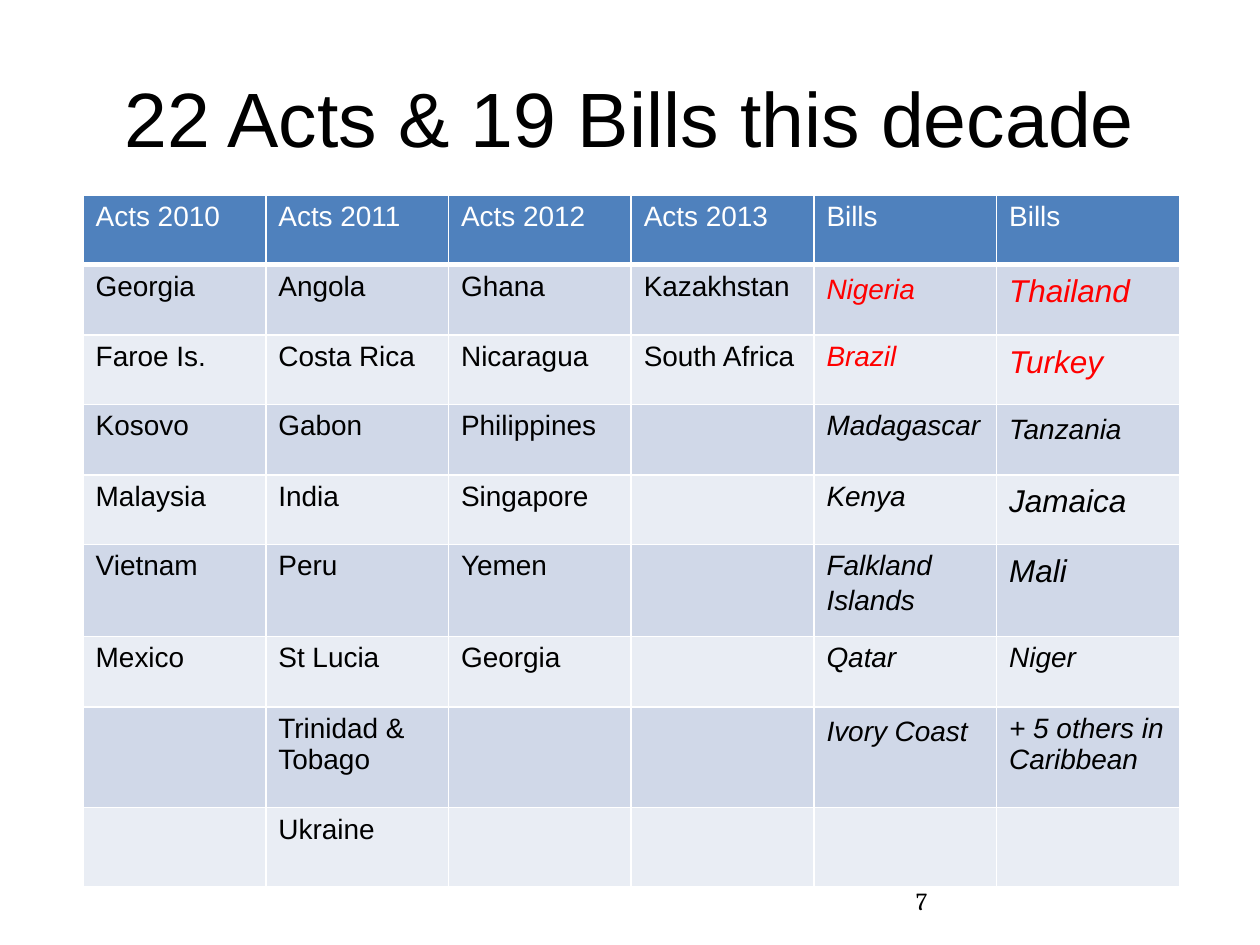
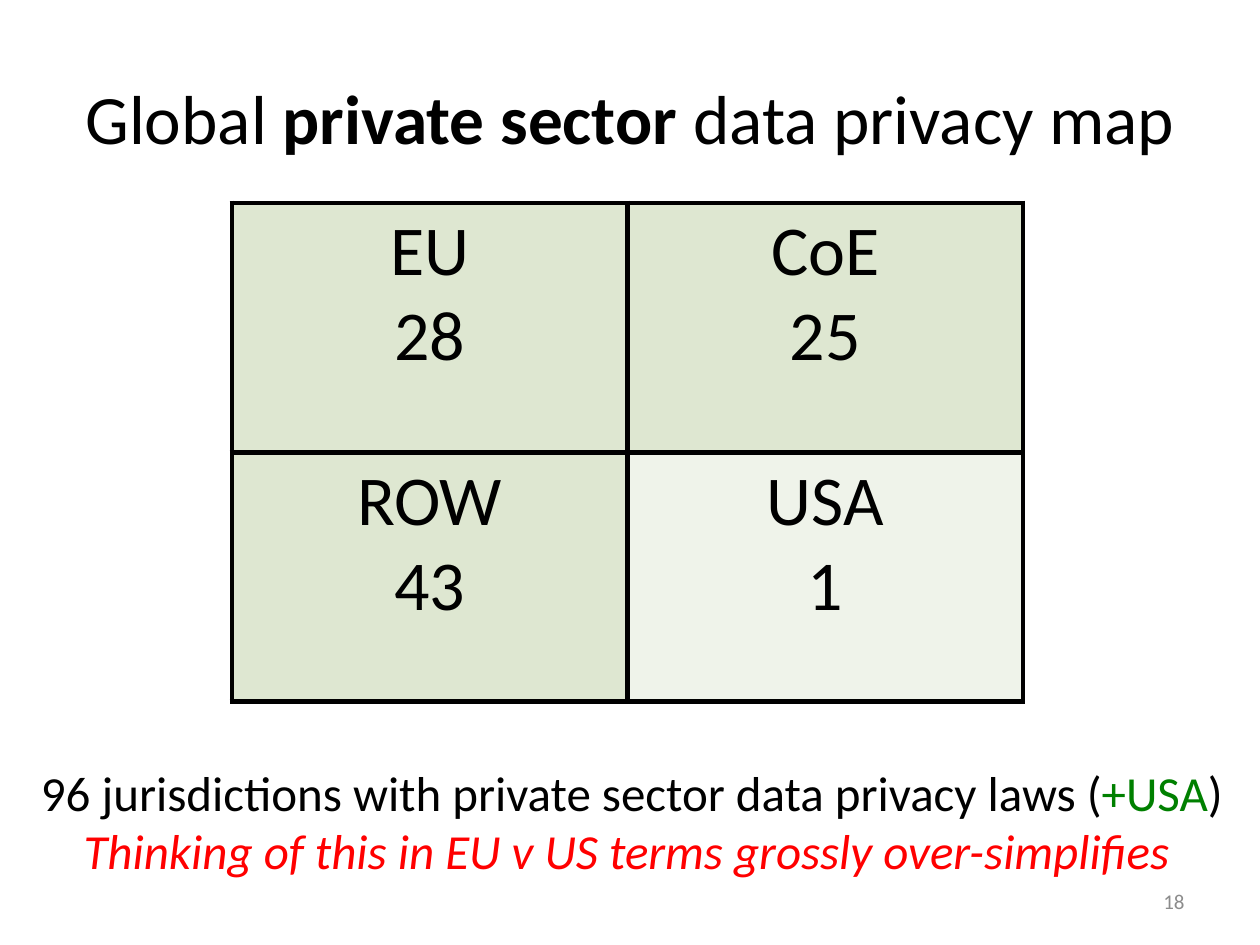
from dataclasses import dataclass
from itertools import zip_longest

from lxml import etree
from pptx import Presentation
from pptx.dml.color import RGBColor
from pptx.enum.text import MSO_ANCHOR, MSO_AUTO_SIZE, PP_ALIGN
from pptx.oxml.ns import qn
from pptx.util import Emu, Pt

LEFT, CENTER, RIGHT = PP_ALIGN.LEFT, PP_ALIGN.CENTER, PP_ALIGN.RIGHT
MIDDLE = MSO_ANCHOR.MIDDLE
NO_FIT, GROW = MSO_AUTO_SIZE.NONE, MSO_AUTO_SIZE.SHAPE_TO_FIT_TEXT
EMU_PER_PX = 9144
TITLE_ONLY = 5
TITLE_AREA = (50, 30, 900, 125)
NUMBER_AREA = (717, 695, 233, 40)


@dataclass(frozen=True)
class Theme:
    black: str = "000000"
    white: str = "FFFFFF"
    red: str = "FF0000"
    green: str = "008000"
    gray: str = "8C8C8C"
    header: str = "4F81BD"
    bands: tuple = ("D0D8E8", "E9EDF4")
    law: str = "DEE7D1"
    partial_law: str = "EFF3EA"
    sans: str = "Arial"
    body: str = "Calibri"
    serif: str = "Cambria"
    title_size: float = 44
    small_title_size: float = 39.6
    map_size: float = 40
    note_size: float = 28
    big_country_size: float = 18
    country_size: float = 16
    number_size: float = 14
    small_number_size: float = 12


THEME = Theme()


def px(length):
    return Emu(length * EMU_PER_PX)


def write_text(frame, lines, align=LEFT, **base):
    for index, line in enumerate(lines):
        para = frame.paragraphs[0] if index == 0 else frame.add_paragraph()
        para.alignment = align
        for words, changes in line:
            style = {"color": THEME.black, "bold": False, "italic": False, **base, **changes}
            span = para.add_run()
            span.text = words
            font = span.font
            font.name = style["font"]
            font.size = Pt(style["size"])
            font.bold = style["bold"]
            font.italic = style["italic"]
            font.color.rgb = RGBColor.from_string(style["color"])


def plain(words):
    return [(words, {})]


def bill(name, size=THEME.country_size, space_size=None, color=THEME.black):
    spans = [(name, {"size": size, "color": color, "italic": True})]
    if space_size:
        spans.append((" ", {"size": space_size, "italic": True}))
    return spans


def set_border(cell, side, color, width):
    properties = cell._tc.get_or_add_tcPr()
    line = etree.SubElement(properties, qn(f"a:ln{side}"), w=str(Pt(width)))
    fill = etree.SubElement(line, qn("a:solidFill"))
    etree.SubElement(fill, qn("a:srgbClr"), val=color)


class SlideBuilder:
    def __init__(self, deck, theme):
        self.deck = deck
        self.theme = theme
        self.page = None

    def start_page(self):
        self.page = self.deck.slides.add_slide(self.deck.slide_layouts[TITLE_ONLY])

    def title(self, spans, **style):
        box = self.page.shapes.title
        box.left, box.top, box.width, box.height = map(px, TITLE_AREA)
        box.text_frame.auto_size = NO_FIT
        box.text_frame.vertical_anchor = MIDDLE
        write_text(box.text_frame, [spans], align=CENTER, **style)

    def text_box(self, area, lines, fit=NO_FIT, anchor=None, **style):
        frame = self.page.shapes.add_textbox(*map(px, area)).text_frame
        frame.word_wrap = True
        frame.auto_size = fit
        frame.vertical_anchor = anchor
        write_text(frame, lines, **style)

    def page_number(self, number, **style):
        self.text_box(NUMBER_AREA, [plain(str(number))], anchor=MIDDLE, **style)

    def table(self, left, top, column_width, row_heights, rows, format_cell):
        column_count = len(rows[0])
        area = (left, top, column_width * column_count, sum(row_heights))
        table = self.page.shapes.add_table(len(rows), column_count, *map(px, area)).table
        table.first_row = table.horz_banding = False
        for column in table.columns:
            column.width = px(column_width)
        for row, height in zip(table.rows, row_heights):
            row.height = px(height)
        for row_index, row in enumerate(rows):
            for column_index, lines in enumerate(row):
                cell = table.cell(row_index, column_index)
                look = format_cell(row_index, column_index)
                for side in "LRTB":
                    width = look["bottom_width"] if side == "B" else look["border_width"]
                    set_border(cell, side, look["border"], width)
                cell.fill.solid()
                cell.fill.fore_color.rgb = RGBColor.from_string(look["fill"])
                write_text(cell.text_frame, lines, **look["text"])


def build_acts_page(builder):
    theme = builder.theme
    act_columns = [
        ["Acts 2010", "Georgia", "Faroe Is.", "Kosovo", "Malaysia", "Vietnam", "Mexico"],
        ["Acts 2011", "Angola", "Costa Rica", "Gabon", "India", "Peru", "St Lucia",
         "Trinidad & Tobago", "Ukraine"],
        ["Acts 2012", "Ghana", "Nicaragua", "Philippines", "Singapore", "Yemen", "Georgia"],
        ["Acts 2013", "Kazakhstan", "South Africa"],
    ]
    big = theme.big_country_size
    bill_columns = [
        [plain("Bills"), bill("Nigeria", space_size=18, color=theme.red),
         bill("Brazil", color=theme.red), bill("Madagascar"), bill("Kenya"),
         bill("Falkland Islands", space_size=18), bill("Qatar"),
         bill("Ivory Coast", space_size=18)],
        [plain("Bills"), bill("Thailand", big, 20, theme.red),
         bill("Turkey", big, 20, theme.red), bill("Tanzania", space_size=18),
         bill("Jamaica", big, 20), bill("Mali", big, 20), bill("Niger"),
         bill("+ 5 others in Caribbean")],
    ]
    columns = [[plain(name) for name in column] for column in act_columns] + bill_columns
    rows = [[[spans] if spans else [] for spans in row] for row in zip_longest(*columns)]

    def format_cell(row, column):
        is_header = row == 0
        return {
            "fill": theme.header if is_header else theme.bands[(row - 1) % 2],
            "border": theme.white,
            "border_width": 1,
            "bottom_width": 3 if is_header else 1,
            "text": {"font": theme.sans, "size": theme.country_size,
                     "color": theme.white if is_header else theme.black},
        }

    builder.start_page()
    builder.title(plain("22 Acts & 19 Bills this decade"),
                  font=theme.sans, size=theme.title_size)
    heights = [55, 56, 55, 56, 55, 73, 56, 80, 63]
    builder.table(66, 155, 145, heights, rows, format_cell)
    builder.page_number(7, font=theme.serif, size=theme.number_size)


def build_map_page(builder):
    theme = builder.theme
    regions = [[("EU", 28), ("CoE", 25)], [("ROW", 43), ("USA", 1)]]
    rows = [[[plain(name), plain(str(count))] for name, count in row] for row in regions]

    def format_cell(row, column):
        return {
            "fill": theme.partial_law if regions[row][column][0] == "USA" else theme.law,
            "border": theme.black,
            "border_width": 3,
            "bottom_width": 3,
            "text": {"font": theme.body, "size": theme.map_size, "align": CENTER},
        }

    builder.start_page()
    builder.title([("Global ", {}), ("private sector ", {"bold": True}),
                   ("data privacy map", {})],
                  font=theme.body, size=theme.small_title_size)
    builder.table(184, 161, 314, [198, 198], rows, format_cell)
    notes = [
        [("96 jurisdictions with private sector data privacy laws (", {}),
         ("+USA", {"color": theme.green}), (")", {})],
        [("Thinking of this in EU v US terms grossly over-simplifies ",
          {"color": theme.red, "italic": True})],
    ]
    builder.text_box((20, 600, 963, 104), notes, fit=GROW, align=CENTER,
                     font=theme.body, size=theme.note_size)
    builder.page_number(18, align=RIGHT, font=theme.body,
                        size=theme.small_number_size, color=theme.gray)


def main():
    deck = Presentation()
    deck.slide_width, deck.slide_height = px(1000), px(750)
    builder = SlideBuilder(deck, THEME)
    build_acts_page(builder)
    build_map_page(builder)
    deck.save("out.pptx")


if __name__ == "__main__":
    main()
